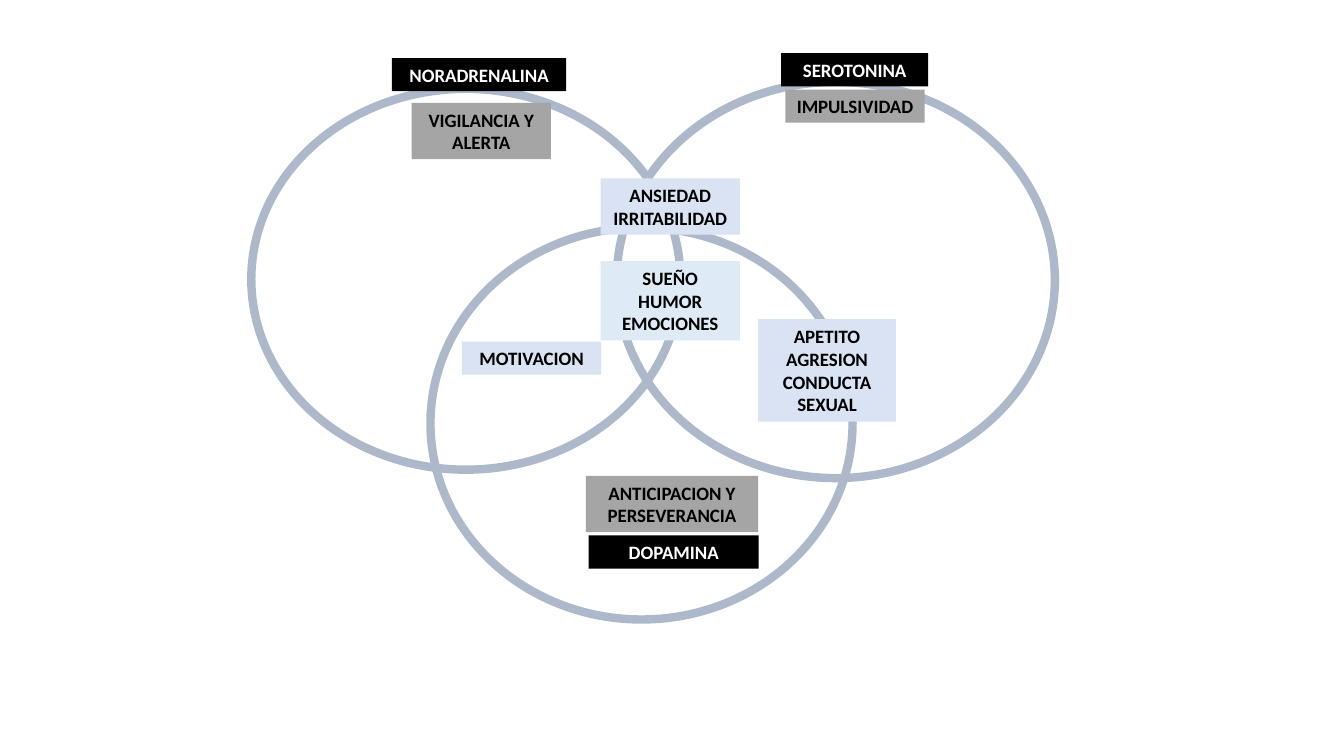
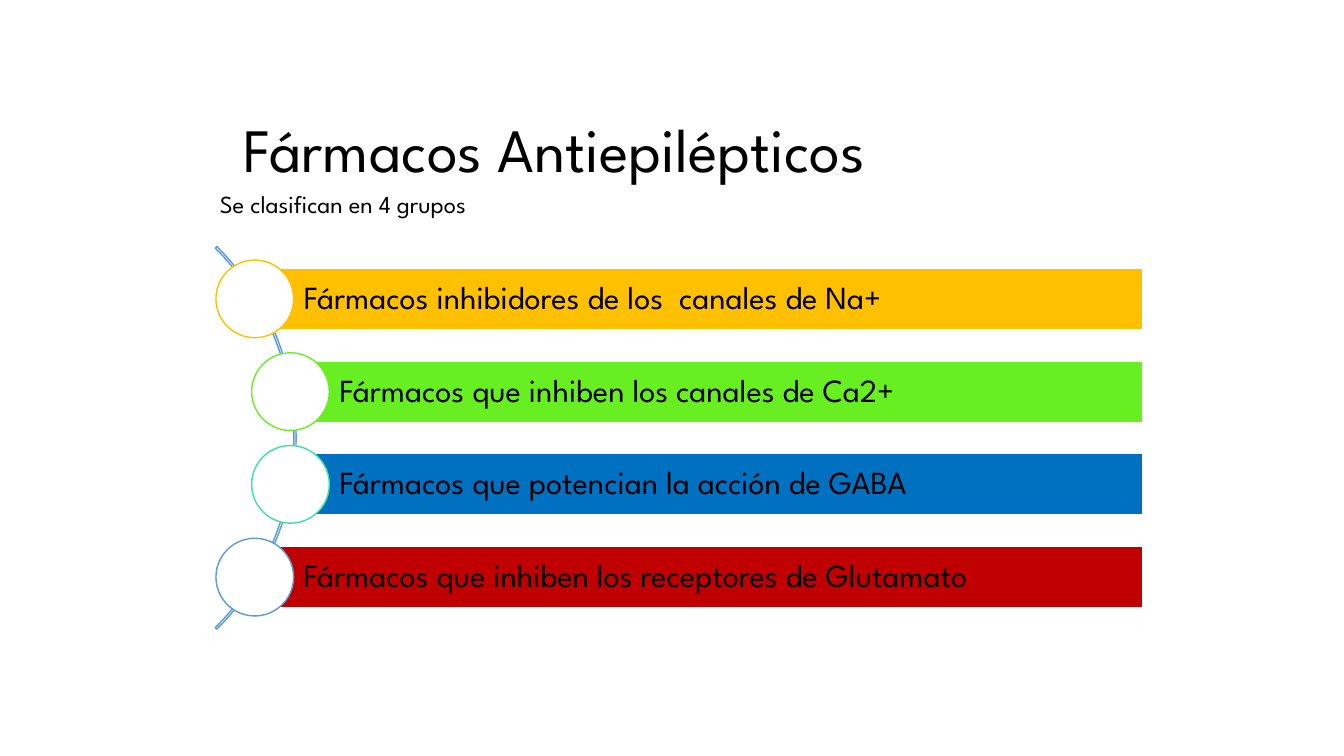
from pptx import Presentation
from pptx.dml.color import RGBColor
from pptx.enum.shapes import MSO_SHAPE as Geo
from pptx.enum.text import MSO_ANCHOR as Anchor, MSO_AUTO_SIZE as Fit, PP_ALIGN as Align
from pptx.util import Pt

BLACK, WHITE, GREY = "000000", "FFFFFF", "A5A5A5"
RING, PALE, SKY, BLUE = "ADB9CA", "DAE3F3", "DEEBF7", "5B9BD5"
SANS, HEAD = "Calibri", "League Spartan"
hue = RGBColor.from_string


def draw(slide, geo, box, fill=None, line=None, width=1):
    """Add a shadowless shape; a missing fill or line is left clear."""
    shape = slide.shapes.add_shape(geo, *map(Pt, box))
    shape.shadow.inherit = False
    if fill:
        shape.fill.solid()
        shape.fill.fore_color.rgb = hue(fill)
    else:
        shape.fill.background()
    if line:
        shape.line.color.rgb = hue(line)
        shape.line.width = Pt(width)
    else:
        shape.line.fill.background()
    return shape


def write(shape, text, font, size, ink=BLACK, bold=False, align=Align.LEFT,
          space=1.0, anchor=Anchor.MIDDLE):
    """Set the text of a shape, one paragraph per line."""
    frame = shape.text_frame
    frame.text = text
    frame.word_wrap = True
    frame.vertical_anchor = anchor
    for para in frame.paragraphs:
        para.alignment = align
        para.line_spacing = space
        for run in para.runs:
            run.font.name = font
            run.font.size = Pt(size)
            run.font.bold = bold
            run.font.color.rgb = hue(ink)
    return frame


deck = Presentation()
deck.slide_width, deck.slide_height = Pt(960), Pt(540)
blank = deck.slide_layouts[6]

# Neurotransmitters: three overlapping rings with labels
venn = deck.slides.add_slide(blank)
rings = [
    (179.5, 63.5, 306.5, 272),
    (440.5, 58.5, 313, 283),
    (307.5, 162.5, 301.5, 280),
]
for ring in rings:
    draw(venn, Geo.OVAL, ring, line=RING, width=6)

# text, left, top, width, lines shown, fill
labels = [
    ("NORADRENALINA", 280, 41.5, 124.5, 1, BLACK),
    ("SEROTONINA", 558, 38, 105, 1, BLACK),
    ("DOPAMINA", 420.5, 382.5, 121.5, 1, BLACK),
    ("VIGILANCIA Y ALERTA", 294, 73.5, 99.5, 2, GREY),
    ("IMPULSIVIDAD", 561, 64, 99.5, 1, GREY),
    ("ANTICIPACION Y PERSEVERANCIA", 418.5, 340, 123, 2, GREY),
    ("MOTIVACION", 330, 244, 99.5, 1, PALE),
    ("APETITO\nAGRESION\nCONDUCTA SEXUAL", 541.5, 228, 98.5, 4, PALE),
    ("ANSIEDAD\nIRRITABILIDAD", 429, 127.5, 99.5, 2, PALE),
    ("SUEÑO\nHUMOR\nEMOCIONES", 429, 186.5, 99.5, 3, SKY),
]
for text, left, top, width, lines, fill in labels:
    tag = draw(venn, Geo.RECTANGLE, (left, top, width, 7.2 + 16.5 * lines), fill)
    ink = WHITE if fill == BLACK else BLACK
    frame = write(tag, text, SANS, 13.5, ink, True, Align.CENTER)
    frame.auto_size = Fit.SHAPE_TO_FIT_TEXT

# Antiepileptic drugs: four bars along an arc
drugs = deck.slides.add_slide(blank)
title = drugs.shapes.add_textbox(Pt(167), Pt(81.5), Pt(620.5), Pt(55.5))
write(title, "Fármacos Antiepilépticos", HEAD, 44, space=0.9)
lead = drugs.shapes.add_textbox(Pt(150), Pt(137), Pt(232), Pt(32.5))
write(lead, "Se clasifican en 4 grupos", HEAD, 17.5, space=0.7, anchor=Anchor.TOP)
lead.text_frame.paragraphs[0].space_before = Pt(10)

arc = draw(drugs, Geo.BLOCK_ARC, (-175, 119.5, 386.5, 386.5), line=BLUE)
for i, turn in enumerate((189, 27, 0.004)):
    arc.adjustments[i] = turn

RIGHT, FIRST, STEP, TALL, DOT = 816, 213.5, 66.25, 44, 55.5
# text, left, bar fill, dot outline
groups = [
    ("Fármacos inhibidores de los  canales de Na+", 182, "FFC000", "FFC000"),
    ("Fármacos que inhiben los canales de Ca2+", 207.5, "67EF21", "67EF21"),
    ("Fármacos que potencian la acción de GABA", 207.5, "0070C0", "3FE19B"),
    ("Fármacos que inhiben los receptores de Glutamato", 182, "C00000", BLUE),
]
for i, (text, left, fill, edge) in enumerate(groups):
    mid = FIRST + i * STEP
    bar = draw(drugs, Geo.RECTANGLE, (left, mid - TALL / 2, RIGHT - left, TALL), fill, WHITE)
    frame = write(bar, text, HEAD, 23, space=0.9)
    frame.margin_left = Pt(35)
    frame.margin_right = frame.margin_top = frame.margin_bottom = Pt(4.5)
    draw(drugs, Geo.OVAL, (left - DOT / 2, mid - DOT / 2, DOT, DOT), WHITE, edge)

deck.save("out.pptx")
